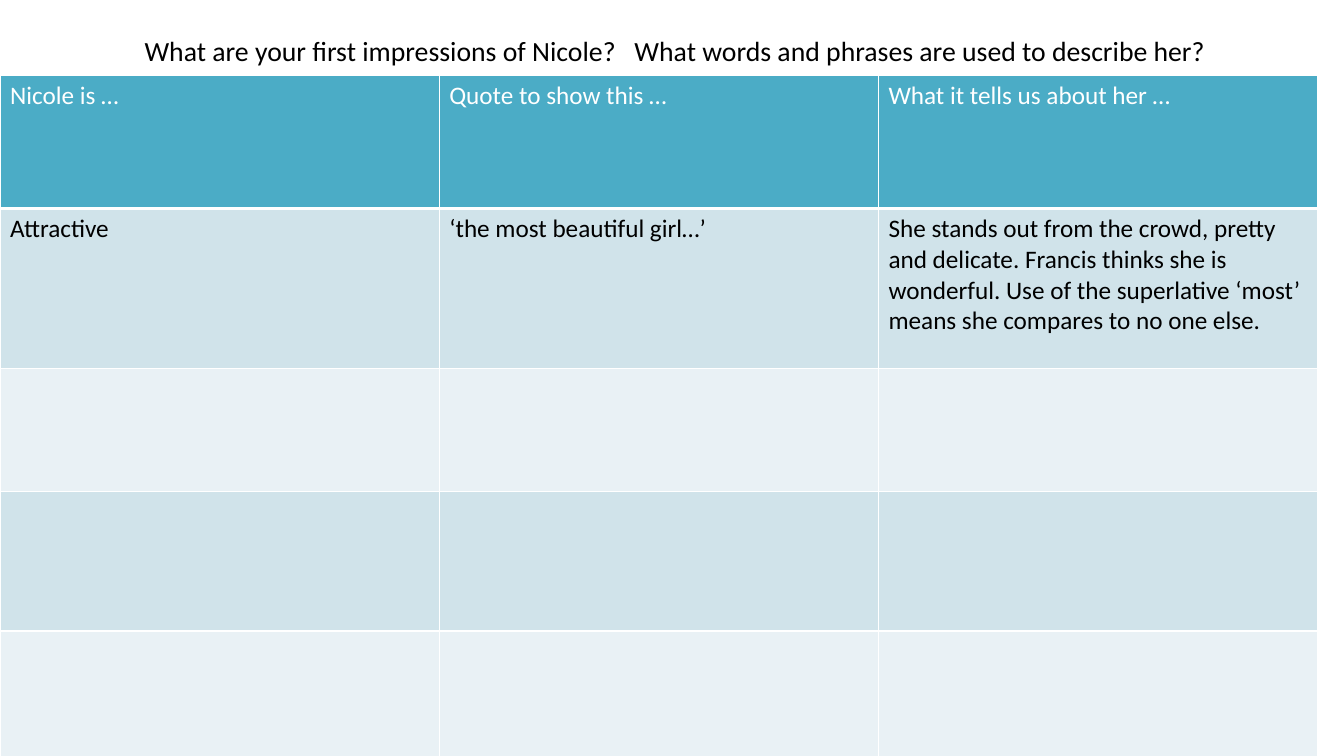
import pptx
import pptx.util
import pptx.dml.color
import pptx.enum.text
import pptx.oxml
import pptx.oxml.ns
from dataclasses import dataclass


@dataclass(frozen=True)
class Theme:
    font: str = "Calibri"
    title_size: float = 19.8
    cell_size: float = 18
    dark: str = "000000"
    light: str = "FFFFFF"
    header: str = "4BACC6"
    bands: tuple = ("D0E3EA", "E9F1F5")
    border: float = 1
    header_rule: float = 3
    question_gap: float = 9


THEME = Theme()
SLIDE_SIZE = (13.33, 7.5)
TITLE_BOX = (0.1, 0.16, 13.18, 0.59)
TABLE_BOX = (0, 0.75, 13.07, 6.83)
ROW_HEIGHTS = (1.32, 1.59, 1.22, 1.38, 1.32)
QUESTIONS = (
    "What are your first impressions of Nicole?",
    "What words and phrases are used to describe her?",
)
ROWS = (
    ("Nicole is …", "Quote to show this …", "What it tells us about her …"),
    (
        "Attractive",
        "‘the most beautiful girl…’",
        "She stands out from the crowd, pretty and delicate. Francis thinks she is "
        "wonderful. Use of the superlative ‘most’ means she compares to no one else.",
    ),
    ("", "", ""),
    ("", "", ""),
    ("", "", ""),
)


def rgb(value):
    return pptx.dml.color.RGBColor.from_string(value)


def inches(values):
    return [pptx.util.Inches(v) for v in values]


def style_font(font, size, color):
    font.name = THEME.font
    font.size = pptx.util.Pt(size)
    font.bold = False
    font.color.rgb = rgb(color)


def add_title(slide, box):
    tf = slide.shapes.add_textbox(*inches(box)).text_frame
    tf.word_wrap = True
    tf.vertical_anchor = pptx.enum.text.MSO_ANCHOR.BOTTOM
    tf.margin_bottom = pptx.util.Inches(0.08)
    p = tf.paragraphs[0]
    p.alignment = pptx.enum.text.PP_ALIGN.CENTER
    for text in (QUESTIONS[0], " ", QUESTIONS[1]):
        r = p.add_run()
        r.text = text
        style_font(r.font, THEME.title_size, THEME.dark)
        if text == " ":
            r._r.get_or_add_rPr().set("spc", str(int(THEME.question_gap * 100)))


def set_borders(cell, bottom):
    tcPr = cell._tc.get_or_add_tcPr()
    widths = {"lnL": THEME.border, "lnR": THEME.border, "lnT": THEME.border, "lnB": bottom}
    for i, (tag, width) in enumerate(widths.items()):
        line = pptx.oxml.parse_xml(
            f'<a:{tag} {pptx.oxml.ns.nsdecls("a")} w="{pptx.util.Pt(width)}">'
            f'<a:solidFill><a:srgbClr val="{THEME.light}"/></a:solidFill></a:{tag}>'
        )
        tcPr.insert(i, line)


def add_impressions_table(slide, box):
    columns = len(ROWS[0])
    table = slide.shapes.add_table(len(ROWS), columns, *inches(box)).table
    for column in table.columns:
        column.width = pptx.util.Inches(box[2] / columns)
    for i, (texts, height) in enumerate(zip(ROWS, ROW_HEIGHTS)):
        table.rows[i].height = pptx.util.Inches(height)
        is_header = i == 0
        fill = THEME.header if is_header else THEME.bands[(i - 1) % 2]
        color = THEME.light if is_header else THEME.dark
        for j, text in enumerate(texts):
            cell = table.cell(i, j)
            cell.fill.solid()
            cell.fill.fore_color.rgb = rgb(fill)
            set_borders(cell, THEME.header_rule if is_header else THEME.border)
            cell.text_frame.text = text
            for r in cell.text_frame.paragraphs[0].runs:
                style_font(r.font, THEME.cell_size, color)


def main():
    prs = pptx.Presentation()
    prs.slide_width, prs.slide_height = inches(SLIDE_SIZE)
    slide = prs.slides.add_slide(prs.slide_layouts[6])
    add_title(slide, TITLE_BOX)
    add_impressions_table(slide, TABLE_BOX)
    prs.save("out.pptx")


if __name__ == "__main__":
    main()
